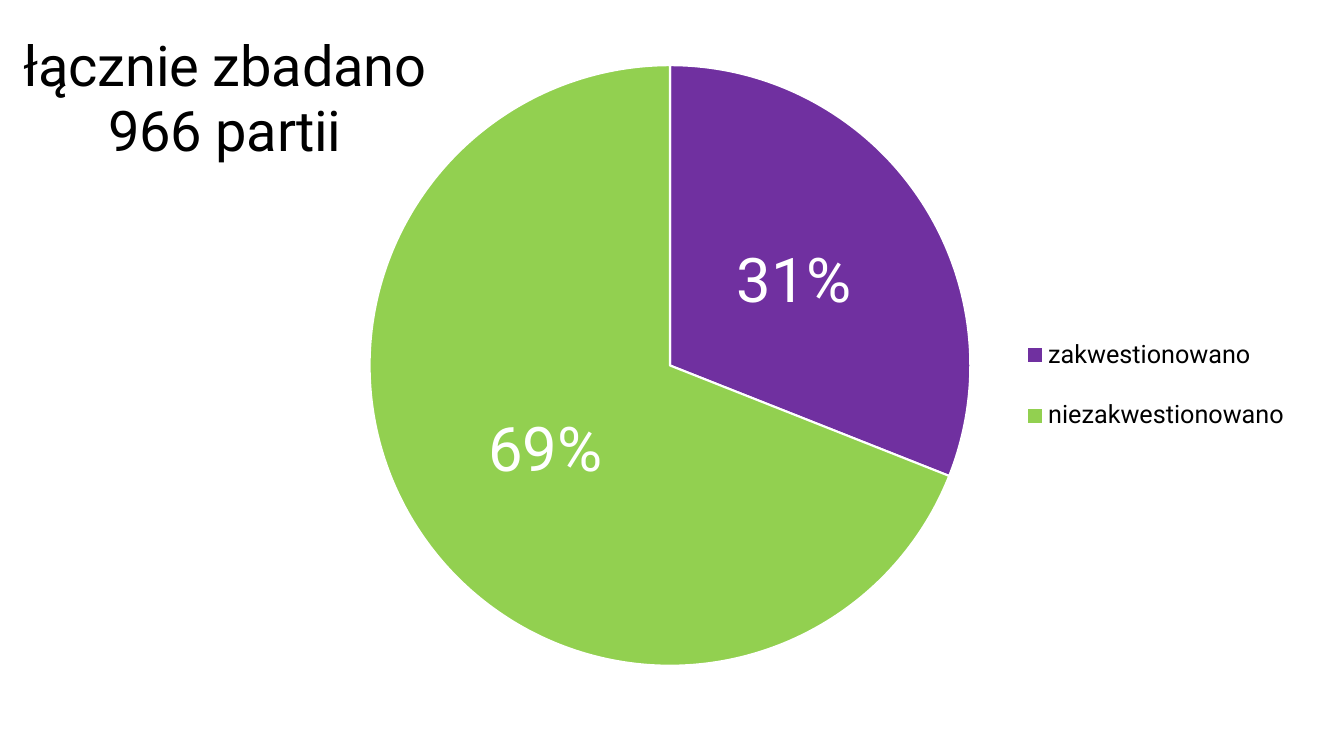
from lxml import etree
from pptx import Presentation
from pptx.chart.data import CategoryChartData as ChartData
from pptx.dml.color import RGBColor
from pptx.enum.chart import (XL_CHART_TYPE as ChartType,
                             XL_LABEL_POSITION as LabelPosition,
                             XL_LEGEND_POSITION as LegendPosition)
from pptx.enum.text import PP_ALIGN as Align
from pptx.oxml.ns import qn
from pptx.util import Inches, Pt

COLORS = {"black": "000000", "white": "FFFFFF",
          "questioned": "7030A0", "unquestioned": "92D050"}
SHARES = {"zakwestionowano": 31, "niezakwestionowano": 69}


class SlideBuilder:
    """Holds the style and the current slide; lengths are shares of its size."""

    font_name = "Roboto"

    def __init__(self, deck):
        self.width, self.height = deck.slide_width, deck.slide_height
        self.page = deck.slides.add_slide(deck.slide_layouts[6])

    def color(self, name):
        return RGBColor.from_string(COLORS[name])

    def style(self, font, size, color):
        font.name, font.size, font.bold = self.font_name, Pt(size), False
        font.color.rgb = self.color(color)

    def place(self, chart, part, **shares):
        """Fix a chart part by shares of the chart's size."""
        node = chart.element.find(".//" + qn(f"c:{part}"))
        for old in node.findall(qn("c:layout")):
            node.remove(old)
        layout = etree.Element(qn("c:layout"))
        manual = etree.SubElement(layout, qn("c:manualLayout"))
        settings = {"xMode": "edge", "yMode": "edge", **shares}
        if part == "plotArea":
            settings = {"layoutTarget": "inner", **settings}
        for key, value in settings.items():
            etree.SubElement(manual, qn(f"c:{key}")).set("val", str(value))
        overlay = node.find(qn("c:overlay"))
        node.insert(0 if overlay is None else node.index(overlay), layout)

    def pie(self, name, shares, colors, left, top, width, height):
        data = ChartData()
        data.categories = list(shares)
        data.add_series(name, list(shares.values()))
        chart = self.page.shapes.add_chart(
            ChartType.PIE, int(left * self.width), int(top * self.height),
            int(width * self.width), int(height * self.height), data).chart
        self.style(chart.font, 10, "black")
        plot = chart.plots[0]
        plot.vary_by_categories = True

        # Slices
        for index, color in enumerate(colors):
            point = plot.series[0].points[index]
            point.format.fill.solid()
            point.format.fill.fore_color.rgb = self.color(color)
            point.format.line.color.rgb = self.color("white")
            point.format.line.width = Pt(1.5)

        # Percentages
        labels = plot.series[0].data_labels
        labels.show_percentage, labels.show_value = True, False
        labels.number_format, labels.number_format_is_linked = "0%", False
        labels.position = LabelPosition.CENTER
        self.style(labels.font, 44, "white")
        return chart

    def title(self, chart, lines, size, **shares):
        frame = chart.chart_title.text_frame
        frame.text = "\n".join(lines)
        for para in frame.paragraphs:
            para.alignment = Align.CENTER
            for span in para.runs:
                self.style(span.font, size, "black")
        self.place(chart, "title", **shares)

    def legend(self, chart, size, **shares):
        chart.has_legend = True
        chart.legend.position = LegendPosition.BOTTOM
        chart.legend.include_in_layout = False
        self.style(chart.legend.font, size, "black")
        self.place(chart, "legend", **shares)


def main():
    deck = Presentation()
    deck.slide_width, deck.slide_height = Inches(13.33), Inches(7.5)
    slide = SlideBuilder(deck)

    # Pie over the whole slide
    chart = slide.pie("Series 1", SHARES, ["questioned", "unquestioned"], 0, 0, 1, 1)
    slide.place(chart, "plotArea", x=0.275, y=0.086, w=0.447, h=0.795)

    # Title at the top left, legend at the right
    slide.title(chart, ["łącznie zbadano", "966 partii"], 40, x=0.015, y=0.04)
    slide.legend(chart, 18, x=0.755, y=0.41, w=0.21, h=0.2)

    deck.save("out.pptx")


if __name__ == "__main__":
    main()
